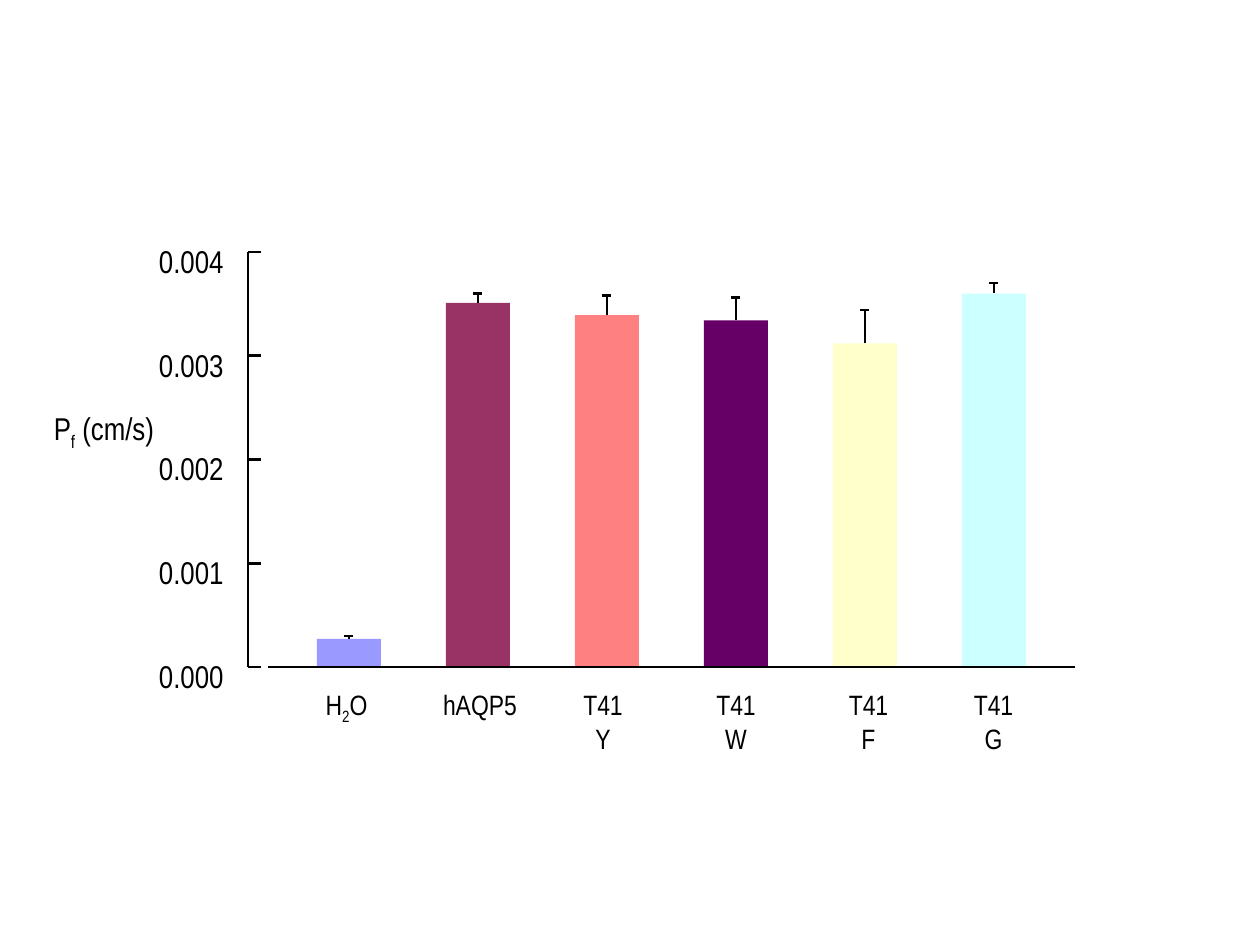
from pptx import Presentation
from pptx import util as u
from pptx.dml.color import RGBColor
from pptx.enum import shapes, text

PX = u.Inches(1) / 126
THEME = dict(font="Arial Narrow", ink="000000", line=1.5, label=16, axis=18)

# label runs (subscripts start with "_"), value, error, colour,
# label left, label width, label wraps
BARS = [
    (["H", "_2", "O"], 0.00027, 0.00003, "9999FF", 325, 43, False),
    (["hAQP5"], 0.00351, 0.00009, "993366", 443, 74, False),
    (["T41Y"], 0.00339, 0.00019, "FF8080", 576, 54, True),
    (["T41W"], 0.00334, 0.00022, "660066", 706, 60, False),
    (["T41F"], 0.00312, 0.00032, "FFFFCC", 842, 53, True),
    (["T41G"], 0.0036, 0.0001, "CCFFFF", 965, 57, False),
]
TICKS = [0, 0.001, 0.002, 0.003, 0.004]
AXIS_TITLE = ["P", "_f", " (cm/s)"]

BASE_Y, PLOT_H = 667, 415
AXIS_X, TICK_W = 248, 13
X_AXIS = (268, 1075)
BAR_X, BAR_STEP, BAR_W, CAP_W = 317, 129, 64, 9


def emu(*lengths):
    return [u.Emu(round(n * PX)) for n in lengths]


def y_of(value):
    return BASE_Y - PLOT_H * value / TICKS[-1]


def add_line(s, x1, y1, x2, y2):
    line = s.shapes.add_connector(shapes.MSO_CONNECTOR.STRAIGHT, *emu(x1, y1, x2, y2))
    line.line.color.rgb = RGBColor.from_string(THEME["ink"])
    line.line.width = u.Pt(THEME["line"])
    sp_pr = line._element.spPr
    sp_pr.append(sp_pr.makeelement(
        "{http://schemas.openxmlformats.org/drawingml/2006/main}effectLst", {}))


def add_bar(s, x, y, w, h, color):
    bar = s.shapes.add_shape(shapes.MSO_SHAPE.RECTANGLE, *emu(x, y, w, h))
    bar.shadow.inherit = False
    bar.fill.solid()
    bar.fill.fore_color.rgb = RGBColor.from_string(color)
    bar.line.fill.background()


def add_text(s, runs, box, size, align, wrap=False, inset=False):
    tf = s.shapes.add_textbox(*emu(*box)).text_frame
    tf.word_wrap = wrap
    if not inset:
        for side in ("left", "top", "right", "bottom"):
            setattr(tf, f"margin_{side}", 0)
    p = tf.paragraphs[0]
    p.alignment = align
    for run in runs:
        r = p.add_run()
        r.text = run.lstrip("_")
        for name, value in dict(name=THEME["font"], size=u.Pt(size)).items():
            setattr(r.font, name, value)
        r.font.color.rgb = RGBColor.from_string(THEME["ink"])
        if run.startswith("_"):
            r._r.get_or_add_rPr().set("baseline", "-25000")


def main():
    prs = Presentation()
    prs.slide_width, prs.slide_height = emu(1260, 945)
    s = prs.slides.add_slide(prs.slide_layouts[6])
    align = text.PP_ALIGN

    for i, (label, value, error, color, left, width, wrap) in enumerate(BARS):
        x, top, cap = BAR_X + i * BAR_STEP, y_of(value), y_of(value + error)
        mid = x + BAR_W / 2
        add_bar(s, x, top, BAR_W, BASE_Y - top, color)
        add_line(s, mid, top, mid, cap)
        add_line(s, mid - CAP_W / 2, cap, mid + CAP_W / 2, cap)
        add_text(s, label, (left, 688, width, 34), THEME["label"], align.CENTER, wrap)

    add_line(s, X_AXIS[0], BASE_Y, X_AXIS[1], BASE_Y)
    add_line(s, AXIS_X, BASE_Y - PLOT_H, AXIS_X, BASE_Y)
    for tick in TICKS:
        y = y_of(tick)
        add_line(s, AXIS_X, y, AXIS_X + TICK_W, y)
        add_text(s, [f"{tick:.3f}"], (159, y - 10, 66, 38), THEME["axis"], align.LEFT)

    add_text(s, AXIS_TITLE, (2, 403, 204, 50), THEME["axis"], align.CENTER,
             wrap=True, inset=True)
    prs.save("out.pptx")


if __name__ == "__main__":
    main()
